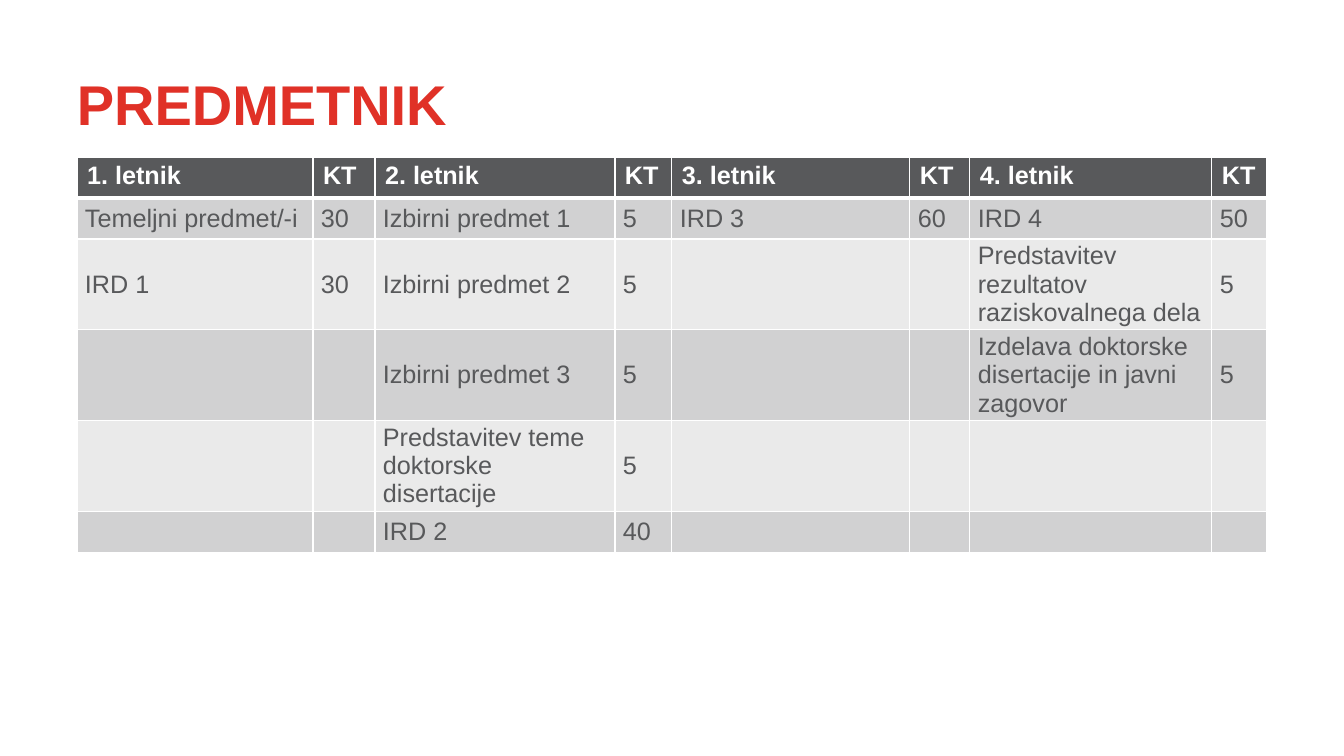
import pptx
import pptx.dml.color
import pptx.enum.text
import pptx.oxml.ns
import pptx.util
from lxml import etree

RED = pptx.dml.color.RGBColor(0xE0, 0x31, 0x27)
GREY = pptx.dml.color.RGBColor(0x58, 0x59, 0x5B)
WHITE = pptx.dml.color.RGBColor(0xFF, 0xFF, 0xFF)
BAND_DARK = pptx.dml.color.RGBColor(0xD1, 0xD1, 0xD2)
BAND_LIGHT = pptx.dml.color.RGBColor(0xEA, 0xEA, 0xEA)

TITLE = "PREDMETNIK"
CURRICULUM = [
    ("1. letnik", "KT", "2. letnik", "KT", "3. letnik", "KT", "4. letnik", "KT"),
    ("Temeljni predmet/-i", "30", "Izbirni predmet 1", "5", "IRD 3", "60", "IRD 4", "50"),
    ("IRD 1", "30", "Izbirni predmet 2", "5", "", "",
     "Predstavitev rezultatov raziskovalnega dela", "5"),
    ("", "", "Izbirni predmet 3", "5", "", "",
     "Izdelava doktorske disertacije in javni zagovor", "5"),
    ("", "", "Predstavitev teme doktorske disertacije", "5", "", "", "", ""),
    ("", "", "IRD 2", "40", "", "", "", ""),
]

SLIDE_SIZE = (1344, 756)
LEFT, TITLE_TOP, TABLE_TOP = 77, 77, 157
TITLE_HEIGHT = 113
COLUMN_WIDTHS = (236, 62, 240, 57, 238, 60, 242, 55)
ROW_HEIGHT = 41  # rows with wrapped text grow to fit
CELL_MARGIN = 8
TABLE_WIDTH = sum(COLUMN_WIDTHS)


def px(length):
    return pptx.util.Emu(round(length * 914400 / 100.8))


def add_run(paragraph, text, size, color, bold):
    run = paragraph.add_run()
    run.text = text
    run.font.name = "Arial"
    run.font.size = pptx.util.Pt(size)
    run.font.color.rgb = color
    run.font.bold = bold


def add_borders(cell, top, bottom):
    """Draw white cell borders; top and bottom are widths in points."""
    qn = pptx.oxml.ns.qn
    properties = cell._tc.get_or_add_tcPr()
    for side, width in (("L", 1), ("R", 1), ("T", top), ("B", bottom)):
        line = etree.SubElement(properties, qn("a:ln" + side), w=str(pptx.util.Pt(width)))
        fill = etree.SubElement(line, qn("a:solidFill"))
        etree.SubElement(fill, qn("a:srgbClr"), val=str(WHITE))


def add_title(slide):
    title = slide.shapes.add_textbox(px(LEFT), px(TITLE_TOP), px(TABLE_WIDTH), px(TITLE_HEIGHT))
    frame = title.text_frame
    frame.word_wrap = True
    frame.margin_left = frame.margin_right = frame.margin_top = frame.margin_bottom = 0
    frame.paragraphs[0].line_spacing = 0.9
    add_run(frame.paragraphs[0], TITLE, 40, RED, True)


def fill_cell(cell, row, text):
    header = row == 0
    add_borders(cell, top=3 if row == 1 else 1, bottom=3 if header else 1)
    cell.fill.solid()
    cell.fill.fore_color.rgb = GREY if header else (BAND_LIGHT, BAND_DARK)[row % 2]
    if not text:
        return
    if not header:
        cell.vertical_anchor = pptx.enum.text.MSO_ANCHOR.MIDDLE
        cell.margin_left = cell.margin_right = px(CELL_MARGIN)
        cell.margin_top = cell.margin_bottom = 0
    add_run(cell.text_frame.paragraphs[0], text, 18, WHITE if header else GREY, header)


def add_curriculum(slide):
    table = slide.shapes.add_table(
        len(CURRICULUM), len(COLUMN_WIDTHS), px(LEFT), px(TABLE_TOP),
        px(TABLE_WIDTH), px(ROW_HEIGHT * len(CURRICULUM))).table
    for column, width in zip(table.columns, COLUMN_WIDTHS):
        column.width = px(width)
    for row, texts in enumerate(CURRICULUM):
        table.rows[row].height = px(ROW_HEIGHT)
        for column, text in enumerate(texts):
            fill_cell(table.cell(row, column), row, text)


def main():
    presentation = pptx.Presentation()
    presentation.slide_width, presentation.slide_height = map(px, SLIDE_SIZE)
    slide = presentation.slides.add_slide(presentation.slide_layouts[6])
    add_title(slide)
    add_curriculum(slide)
    presentation.save("out.pptx")


if __name__ == "__main__":
    main()
